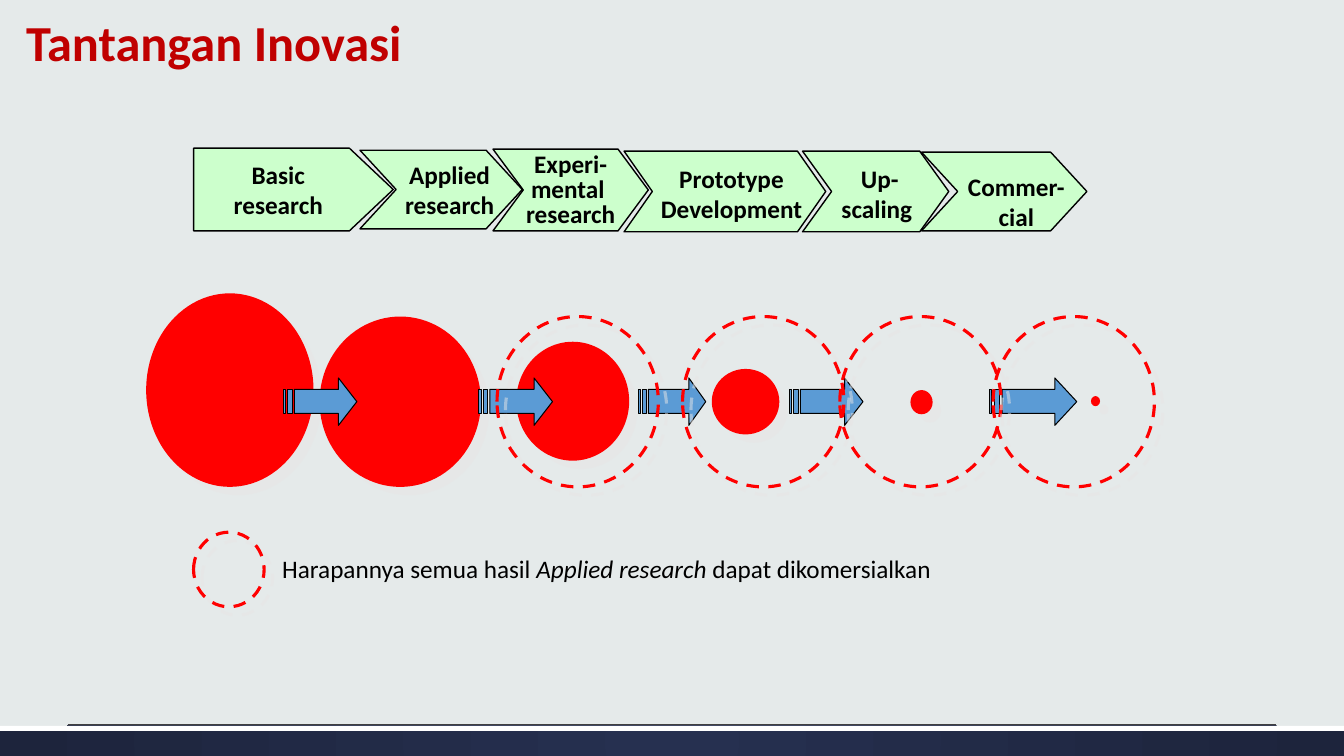
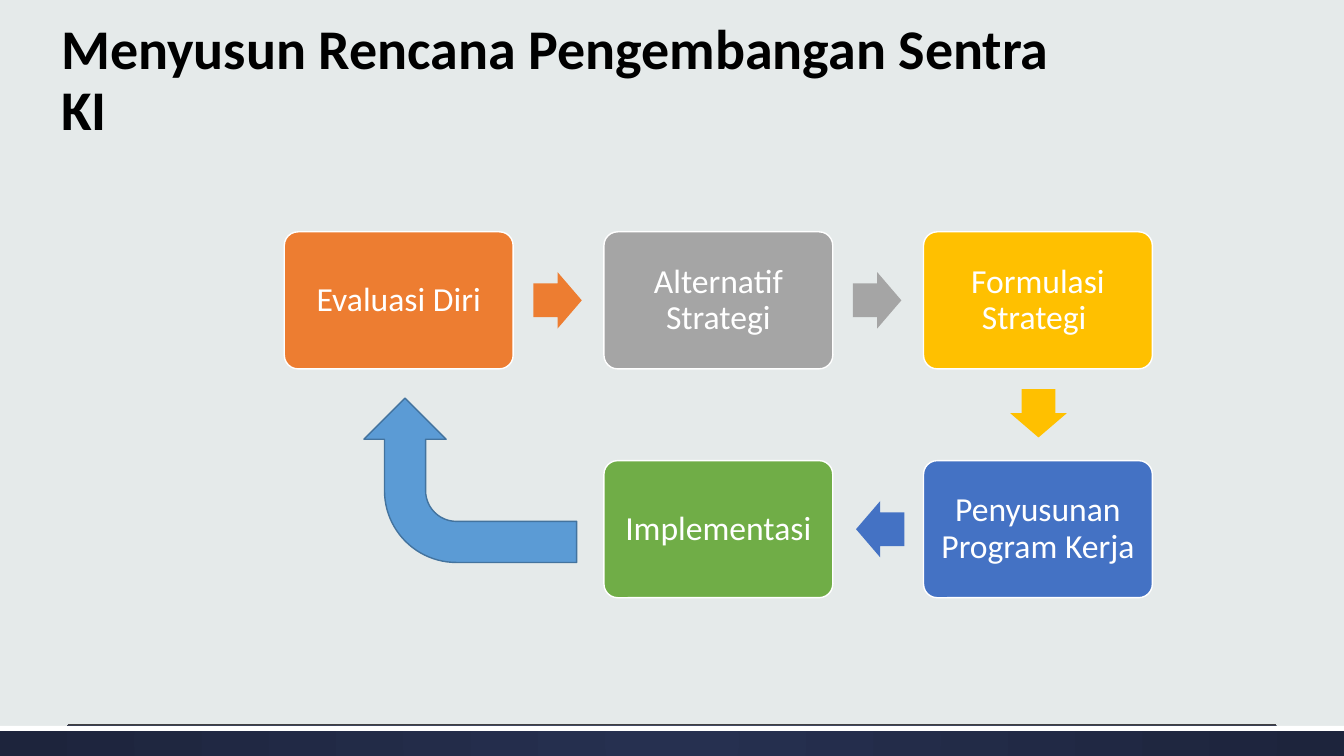
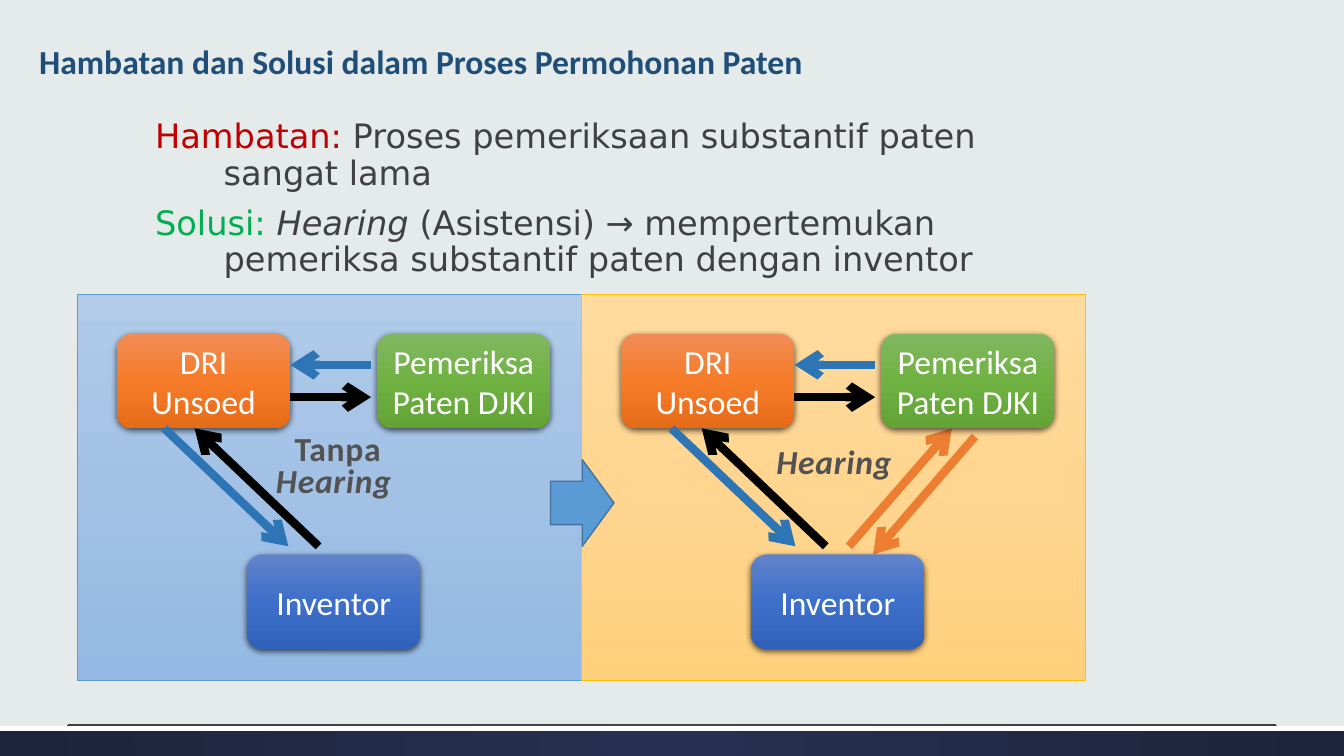
from lxml import etree
from pptx import Presentation, util as u
from pptx.dml.color import RGBColor
from pptx.enum import dml, shapes, text
from pptx.oxml import ns

WIDTH, HEIGHT = 13.33, 7.5
BACKGROUND, BLUE, BLUE_EDGE, RED = "E5EAEA", "5B9BD5", "43739E", "FF0000"
LINK_BLUE, BLACK, WHITE, ORANGE = "2E75B6", "000000", "FFFFFF", "ED7D31"
SOFT_SHADOW = ("E7E6E6", 50, 0, 8.5, 45)
CARD_SHADOW = ("000000", 63, 4.5, 1.5, 90)
PRESET = shapes.MSO_SHAPE
CENTER = text.PP_ALIGN.CENTER
MIDDLE, BOTTOM = text.MSO_ANCHOR.MIDDLE, text.MSO_ANCHOR.BOTTOM


def color(value):
    """Turn a hex string into a colour."""
    return RGBColor.from_string(value)


def inches(values):
    """Turn lengths in inches into slide units."""
    return [u.Inches(value) for value in values]


def inside(origin, box):
    """Move a box or point by the origin of its region."""
    return (origin[0] + box[0], origin[1] + box[1], *box[2:])


def node(parent, name, **attributes):
    """Add a drawing element with its attributes."""
    return etree.SubElement(parent, ns.qn("a:" + name),
                            {key: str(value) for key, value in attributes.items()})


def paint_gradient(shape, stops, circular=False):
    """Fill a shape with evenly spaced colour stops."""
    shape.fill.gradient()
    gradient = shape._element.spPr.find(ns.qn("a:gradFill"))
    for child in list(gradient):
        gradient.remove(child)
    stop_list = node(gradient, "gsLst")
    for index, value in enumerate(stops):
        stop = node(stop_list, "gs", pos=100000 * index // (len(stops) - 1))
        node(stop, "srgbClr", val=value)
    if circular:
        path = node(gradient, "path", path="circle")
        node(path, "fillToRect", l=50000, t=50000, r=50000, b=50000)
    else:
        node(gradient, "lin", ang=5400000, scaled=0)


def style(shape, fill=None, line=None, width=1, dash=None, shadow=None):
    """Set the fill, outline and shadow of a shape."""
    if fill is None:
        shape.fill.background()
    elif isinstance(fill, str):
        shape.fill.solid()
        shape.fill.fore_color.rgb = color(fill)
    else:
        paint_gradient(shape, fill, circular=len(fill) == 2)
    if line:
        shape.line.color.rgb = color(line)
        shape.line.width = u.Pt(width)
        if dash:
            shape.line.dash_style = dash
    else:
        shape.line.fill.background()
    shape.shadow.inherit = False
    if shadow:
        tint, alpha, blur, distance, angle = shadow
        effects = shape._element.spPr.find(ns.qn("a:effectLst"))
        outer = node(effects, "outerShdw", blurRad=u.Pt(blur), dist=u.Pt(distance),
                     dir=angle * 60000, algn="ctr", rotWithShape=0)
        node(node(outer, "srgbClr", val=tint), "alpha", val=alpha * 1000)
    return shape


def add_preset(slide, kind, box, adjust=(), rotation=0, **look):
    """Add a styled preset shape."""
    shape = slide.shapes.add_shape(kind, *inches(box))
    for index, value in enumerate(adjust):
        shape.adjustments[index] = value
    shape.rotation = rotation
    return style(shape, **look)


def write(shape, paragraphs, size=18, ink=BLACK, font="Calibri", bold=False, italic=False,
          align=None, anchor=None, spacing=None, gap=0, hanging=0, tracking=0, margin=None):
    """Write paragraphs, each a string or a list of (text, changes) runs."""
    frame = shape.text_frame
    frame.word_wrap = True
    if anchor is not None:
        frame.vertical_anchor = anchor
    if margin is not None:
        frame.margin_left = frame.margin_right = u.Inches(margin)
        frame.margin_top = frame.margin_bottom = u.Inches(margin)
    for index, content in enumerate(paragraphs):
        paragraph = frame.add_paragraph() if index else frame.paragraphs[0]
        paragraph.alignment = align
        paragraph.line_spacing = spacing
        if index and gap:
            paragraph.space_before = u.Pt(gap)
        if hanging:
            properties = paragraph._p.get_or_add_pPr()
            properties.set("marL", str(u.Inches(hanging)))
            properties.set("indent", str(-u.Inches(hanging)))
        runs = [(content, {})] if isinstance(content, str) else content
        for words, changes in runs:
            run = paragraph.add_run()
            run.text = words
            run.font.name, run.font.size = font, u.Pt(size)
            run.font.bold = bold
            run.font.italic = changes.get("italic", italic)
            run.font.color.rgb = color(changes.get("ink", ink))
            if tracking:
                run._r.get_or_add_rPr().set("spc", str(int(tracking * 100)))


def add_text(slide, box, paragraphs, **form):
    """Add a text box."""
    write(slide.shapes.add_textbox(*inches(box)), paragraphs, **form)


def add_line(slide, start, end, ink, width, arrow=False):
    """Add a straight line, with an open arrowhead at its end if wanted."""
    line = slide.shapes.add_connector(shapes.MSO_CONNECTOR.STRAIGHT, *inches((*start, *end)))
    line.line.color.rgb = color(ink)
    line.line.width = u.Pt(width)
    if arrow:
        node(line.line._get_or_add_ln(), "tailEnd", type="arrow")
    node(line._element.spPr, "effectLst")


def add_slide(presentation, title, box, **form):
    """Add a slide with its bottom band and title."""
    slide = presentation.slides.add_slide(presentation.slide_layouts[6])
    add_line(slide, (0.67, 7.19), (12.66, 7.19), "404040", 0.5)
    add_preset(slide, PRESET.RECTANGLE, (0, 7.2, WIDTH, 0.3), fill=("263050", "1D243C"))
    add_preset(slide, PRESET.RECTANGLE, (0, 7.2, WIDTH, 0.05), fill=WHITE)
    add_text(slide, box, [title], bold=True, anchor=BOTTOM, spacing=0.9, **form)
    return slide


def add_striped_arrow(slide, box):
    """Draw a right arrow with two stripes behind it."""
    left, top, width, height = box
    outlines = [
        [(0.75, 0), (0.75, 0.24), (0.15, 0.24), (0.15, 0.75), (0.75, 0.75), (0.75, 1), (1, 0.5)],
        [(0.06, 0.24), (0.06, 0.75), (0.12, 0.75), (0.12, 0.24)],
        [(0, 0.24), (0, 0.75), (0.03, 0.75), (0.03, 0.24)],
    ]
    builder = None
    for outline in outlines:
        points = [inches((left + x * width, top + y * height)) for x, y in outline]
        if builder is None:
            builder = slide.shapes.build_freeform(*points[0])
        else:
            builder.move_to(*points[0])
        builder.add_line_segments(points[1:], close=True)
    style(builder.convert_to_shape(), fill=BLUE, line=BLACK, width=0.75)


def add_stage_chain(slide, origin):
    """Draw the chain of research stages."""
    stages = [
        ((0, 0, 1.98, 0.82), 0.53, (0.08, 0.06, 1.52, 0.71), ["Basic research"]),
        ((1.65, 0.02, 1.61, 0.78), 0.46, (1.85, 0.06, 1.38, 0.71), ["Applied", "research"]),
        ((2.97, 0.01, 1.54, 0.81), 0.37, (2.92, 0, 1.64, 0.86),
         ["Experi-", "mental ", "research"]),
        ((4.27, 0.03, 2, 0.8), 0.35, (4.38, 0.1, 1.91, 0.71), ["Prototype Development"]),
        ((6.04, 0.03, 1.45, 0.8), 0.36, (5.93, 0.1, 1.75, 0.71), ["Up-", "scaling "]),
        ((7.22, 0.04, 1.64, 0.78), 0.46, (7.32, 0.18, 1.68, 0.71), ["Commer-", "cial"]),
    ]
    for index, (box, point, label_box, label) in enumerate(stages):
        add_preset(slide, PRESET.CHEVRON if index else PRESET.PENTAGON, inside(origin, box),
                   adjust=[point], fill="CCFFCC", line=BLACK)
        add_text(slide, inside(origin, label_box), label, bold=True, align=CENTER,
                 spacing=u.Pt(18) if len(label) == 3 else None)


def add_dashed_circle(slide, box):
    """Draw the dashed ring that stands for the hoped-for result."""
    add_preset(slide, PRESET.OVAL, box, line=RED, width=2.25,
               dash=dml.MSO_LINE.DASH, shadow=SOFT_SHADOW)


def add_shrinking_results(slide, origin):
    """Draw results that shrink from stage to stage."""
    results = [(0, 0, 1.66, 1.92), (1.72, 0.23, 1.6, 1.69), (3.67, 0.48, 1.12, 1.18),
               (5.61, 0.75, 0.67, 0.65), (7.58, 0.96, 0.22, 0.24), (9.37, 1.02, 0.09, 0.1)]
    for box in results:
        add_preset(slide, PRESET.OVAL, inside(origin, box), fill=RED, shadow=SOFT_SHADOW)
    for x, width in [(1.36, 0.73), (3.3, 0.73), (4.88, 0.67), (6.38, 0.73), (8.36, 0.87)]:
        add_striped_arrow(slide, inside(origin, (x, 0.84, width, 0.47)))
    for x in (3.48, 5.32, 6.88, 8.4):
        add_dashed_circle(slide, inside(origin, (x, 0.23, 1.6, 1.69)))


def add_legend(slide, origin):
    """Explain the dashed ring."""
    add_dashed_circle(slide, inside(origin, (0, 0, 0.7, 0.74)))
    add_text(slide, inside(origin, (0.78, 0.16, 8.28, 0.4)),
             [[("Harapannya semua hasil ", {}), ("Applied research ", {"italic": True}),
               ("dapat dikomersialkan", {})]])


def add_planning_cycle(slide, origin):
    """Draw five steps on a grid of three columns and two rows."""
    column, row, width, height = 3.17, 2.27, 2.27, 1.36
    steps = [
        ("Evaluasi Diri", 0, 0, ORANGE, (2.47, 0.4), 0),
        ("Alternatif Strategi", 1, 0, "A5A5A5", (2.47, 0.4), 0),
        ("Formulasi Strategi ", 2, 0, "FFC000", (0.9, 1.52), 90),
        ("Penyusunan Program Kerja", 2, 1, "4472C4", (-0.67, 0.4), 180),
        ("Implementasi", 1, 1, "70AD47", None, 0),
    ]
    for label, across, down, fill, arrow, rotation in steps:
        corner = inside(origin, (across * column, down * row))
        card = add_preset(slide, PRESET.ROUNDED_RECTANGLE, (*corner, width, height),
                          adjust=[0.1], fill=fill, line=WHITE)
        write(card, [label], size=24, ink=WHITE, align=CENTER, anchor=MIDDLE,
              spacing=0.9, margin=0.1)
        if arrow:
            add_preset(slide, PRESET.RIGHT_ARROW, inside(corner, (*arrow, 0.48, 0.56)),
                       adjust=[0.6, 0.5], rotation=rotation, fill=fill)
    add_preset(slide, PRESET.BENT_ARROW, inside(origin, (1.03, 1.41, 1.63, 2.11)),
               rotation=270, fill=BLUE, line=BLUE_EDGE)


def add_parties_panel(slide, box, fill, edge, label, label_box, shift=0, extra_links=()):
    """Draw one panel with three parties and the links between them."""
    add_preset(slide, PRESET.RECTANGLE, box, fill=fill, line=edge, width=0.5)
    parties = [
        (["DRI Unsoed"], 0.39, 0.39, ("F18C57", "F67B28", "E56C19")),
        (["Pemeriksa", "Paten DJKI"], 2.97, 0.39, ("81B861", "6FB242", "62A336")),
        (["Inventor"], 1.68, 2.58, ("6183CB", "3E70CA", "3062BB")),
    ]
    links = [
        ((2.91, 0.7), (2.11, 0.7), LINK_BLUE),
        ((2.11, 1.02), (2.91, 1.02), BLACK),
        ((0.86 + shift, 1.33), (2.09 + shift, 2.5), LINK_BLUE),
        ((2.39 + shift, 2.5), (1.16 + shift, 1.33), BLACK),
    ]
    for start, end, ink in extra_links:
        add_line(slide, inside(box, start), inside(box, end), ink, 6, arrow=True)
    for name, x, y, shades in parties:
        card = add_preset(slide, PRESET.ROUNDED_RECTANGLE, inside(box, (x, y, 1.72, 0.94)),
                          fill=shades, shadow=CARD_SHADOW)
        write(card, name, size=24, ink=WHITE, align=CENTER, anchor=MIDDLE)
    for start, end, ink in links:
        add_line(slide, inside(box, start), inside(box, end), ink, 6, arrow=True)
    add_text(slide, inside(box, label_box), label, size=24, ink="525252", bold=True,
             align=CENTER, spacing=0.8 if len(label) > 1 else None, tracking=0.5)


def build_challenge(presentation):
    """Build the slide on the challenge of innovation."""
    slide = add_slide(presentation, "Tantangan Inovasi", (0.16, 0, 10.4, 0.77),
                      size=36, ink="C00000")
    add_stage_chain(slide, (1.92, 1.47))
    add_shrinking_results(slide, (1.45, 2.91))
    add_legend(slide, (1.92, 5.28))


def build_planning(presentation):
    """Build the slide on the development plan."""
    slide = add_slide(presentation, "Menyusun Rencana Pengembangan Sentra KI",
                      (0.51, 0.2, 10.4, 1.26), size=40)
    add_planning_cycle(slide, (2.82, 2.3))


def build_patent(presentation):
    """Build the slide on patent obstacles and solutions."""
    slide = add_slide(presentation, "Hambatan dan Solusi dalam Proses Permohonan Paten",
                      (0.29, 0.31, 10.4, 0.55), size=24, ink="1F4E79")
    add_text(slide, (1.44, 1.14, 8.92, 1.78), [
        [("Hambatan: ", {"ink": "C00000"}),
         ("Proses pemeriksaan substantif paten sangat lama", {})],
        [("Solusi: ", {"ink": "00B050"}), ("Hearing ", {"italic": True}),
         ("(Asistensi) → mempertemukan pemeriksa substantif paten dengan inventor", {})],
    ], size=24, ink="404040", font="DejaVu Sans", spacing=0.9, gap=10, hanging=0.68)
    hearing = [("Hearing ", {"italic": True})]
    add_parties_panel(slide, (0.77, 2.92, 5, 3.83), ("B1CBE9", "A3C1E5", "93B9E4"), BLUE,
                      ["Tanpa", hearing], (1.8, 1.35, 1.56, 0.76))
    add_parties_panel(slide, (5.77, 2.92, 5, 3.83), ("FFDB9E", "FFD590", "FFD07C"), "FFC000",
                      [hearing], (1.8, 1.41, 1.41, 0.5), shift=0.03,
                      extra_links=[((3.9, 1.41), (2.89, 2.58), ORANGE),
                                   ((2.65, 2.5), (3.67, 1.33), ORANGE)])
    add_preset(slide, PRESET.RIGHT_ARROW, (5.46, 4.56, 0.63, 0.86), fill=BLUE, line=BLUE_EDGE)


def main():
    """Build and save the presentation."""
    presentation = Presentation()
    presentation.slide_width, presentation.slide_height = inches((WIDTH, HEIGHT))
    background = presentation.slide_master.background.fill
    background.solid()
    background.fore_color.rgb = color(BACKGROUND)
    build_challenge(presentation)
    build_planning(presentation)
    build_patent(presentation)
    presentation.save("out.pptx")


if __name__ == "__main__":
    main()
